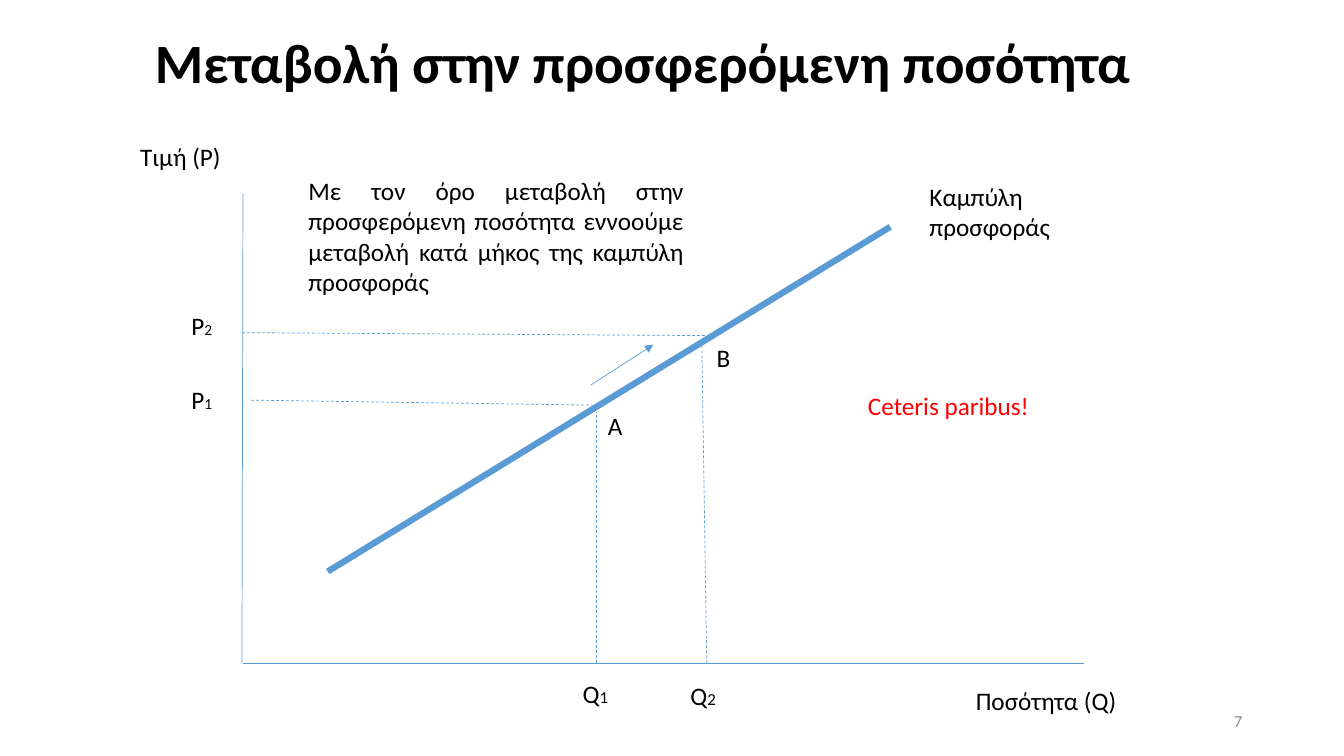
from dataclasses import dataclass

from lxml.etree import SubElement
from pptx import Presentation
from pptx.dml.color import RGBColor as Rgb
from pptx.enum.dml import MSO_LINE as Dash
from pptx.enum.shapes import MSO_CONNECTOR as Conn
from pptx.enum.text import MSO_ANCHOR as Anchor, MSO_AUTO_SIZE as Fit, PP_ALIGN as Align
from pptx.oxml.ns import qn
from pptx.util import Inches, Pt

BLUE, BLACK, RED, GRAY = "5B9BD5", "000000", "FF0000", "8C8C8C"


@dataclass
class Label:
    box: tuple[float, float, float, float]
    text: str
    sub: str = ""
    sub_size: float = 11
    size: float = 18
    color: str = BLACK
    align: Align = Align.LEFT
    anchor: Anchor = Anchor.TOP
    wrap: bool = False


@dataclass
class Line:
    start: tuple[float, float]
    end: tuple[float, float]
    width: float = 0.5
    dash: bool = False
    arrow: bool = False


def paint(target, color: str) -> None:
    target.rgb = Rgb.from_string(color)


def style(font, size: float, color: str, bold: bool = False) -> None:
    for key, value in {"name": "Calibri", "size": Pt(size), "bold": bold}.items():
        setattr(font, key, value)
    paint(font.color, color)


def place(shape, box: tuple[float, float, float, float]) -> None:
    for key, value in zip(("left", "top", "width", "height"), box):
        setattr(shape, key, Inches(value))


def add_label(slide, item: Label) -> None:
    box = slide.shapes.add_textbox(*map(Inches, item.box))
    frame = box.text_frame
    form = {"word_wrap": item.wrap, "auto_size": Fit.NONE, "vertical_anchor": item.anchor}
    for key, value in form.items():
        setattr(frame, key, value)
    para = frame.paragraphs[0]
    para.alignment = item.align
    for text, size in ((item.text, item.size), (item.sub, item.sub_size)):
        if text:
            run = para.add_run()
            run.text = text
            style(run.font, size, item.color)


def add_line(slide, item: Line) -> None:
    ends = map(Inches, item.start + item.end)
    link = slide.shapes.add_connector(Conn.STRAIGHT, *ends)
    link.line.width = Pt(item.width)
    paint(link.line.color, BLUE)
    if item.dash:
        link.line.dash_style = Dash.DASH
    if item.arrow:
        SubElement(link.line._get_or_add_ln(), qn("a:tailEnd"), type="triangle")
    SubElement(link._element.spPr, qn("a:effectLst"))


LINES = [
    # Axes
    Line((2.41, 1.92), (2.4, 6.58)),
    Line((10.75, 6.58), (2.41, 6.58)),
    # Supply curve
    Line((3.25, 5.67), (8.83, 2.25), width=4.5),
    # Guides to points A and B
    Line((2.49, 3.97), (5.92, 4.02), dash=True),
    Line((5.92, 6.58), (5.92, 4.09), dash=True),
    Line((2.4, 3.3), (7.11, 3.33), dash=True),
    Line((7.01, 6.58), (6.96, 3.36), dash=True),
    # Move along the curve
    Line((5.86, 3.82), (6.48, 3.42), arrow=True),
]

LABELS = [
    # Axis and curve names
    Label((1.29, 1.35, 1.12, 0.4), "Τιμή (P)", wrap=True),
    Label((9.58, 6.75, 1.74, 0.4), "Ποσότητα (Q)", wrap=True),
    Label((9.12, 1.75, 1.85, 0.71), "Καμπύλη προσφοράς", wrap=True),
    # Prices and quantities
    Label((1.8, 3.76, 0.41, 0.4), "P", "1"),
    Label((1.8, 3.03, 0.41, 0.4), "P", "2"),
    Label((5.68, 6.68, 0.47, 0.4), "Q", "1", 12),
    Label((6.75, 6.7, 0.46, 0.4), "Q", "2", 12),
    # Points
    Label((5.93, 4.02, 0.35, 0.4), "A"),
    Label((7.01, 3.35, 0.35, 0.4), "Β"),
    # Notes
    Label((2.96, 1.69, 3.92, 1.31),
          "Με τον όρο μεταβολή στην προσφερόμενη ποσότητα εννοούμε "
          "μεταβολή κατά μήκος της καμπύλη προσφοράς",
          align=Align.JUSTIFY, wrap=True),
    Label((8.51, 3.82, 1.82, 0.4), "Ceteris paribus!", color=RED),
    # Page number
    Label((9.42, 6.95, 3, 0.4), "7", size=12, color=GRAY,
          align=Align.RIGHT, anchor=Anchor.MIDDLE, wrap=True),
]


def main() -> None:
    deck = Presentation()
    deck.slide_width, deck.slide_height = Inches(13.33), Inches(7.5)
    slide = deck.slides.add_slide(deck.slide_layouts[5])

    # Title
    title = slide.shapes.title
    place(title, (1.29, 0.31, 10.17, 0.68))
    frame = title.text_frame
    frame.text = "Μεταβολή στην προσφερόμενη ποσότητα"
    frame.auto_size = Fit.NONE
    frame.vertical_anchor = Anchor.MIDDLE
    para = frame.paragraphs[0]
    para.alignment, para.line_spacing = Align.CENTER, 0.9
    style(para.runs[0].font, 39.6, BLACK, bold=True)

    # Diagram
    for line in LINES:
        add_line(slide, line)
    for label in LABELS:
        add_label(slide, label)

    deck.save("out.pptx")


if __name__ == "__main__":
    main()
